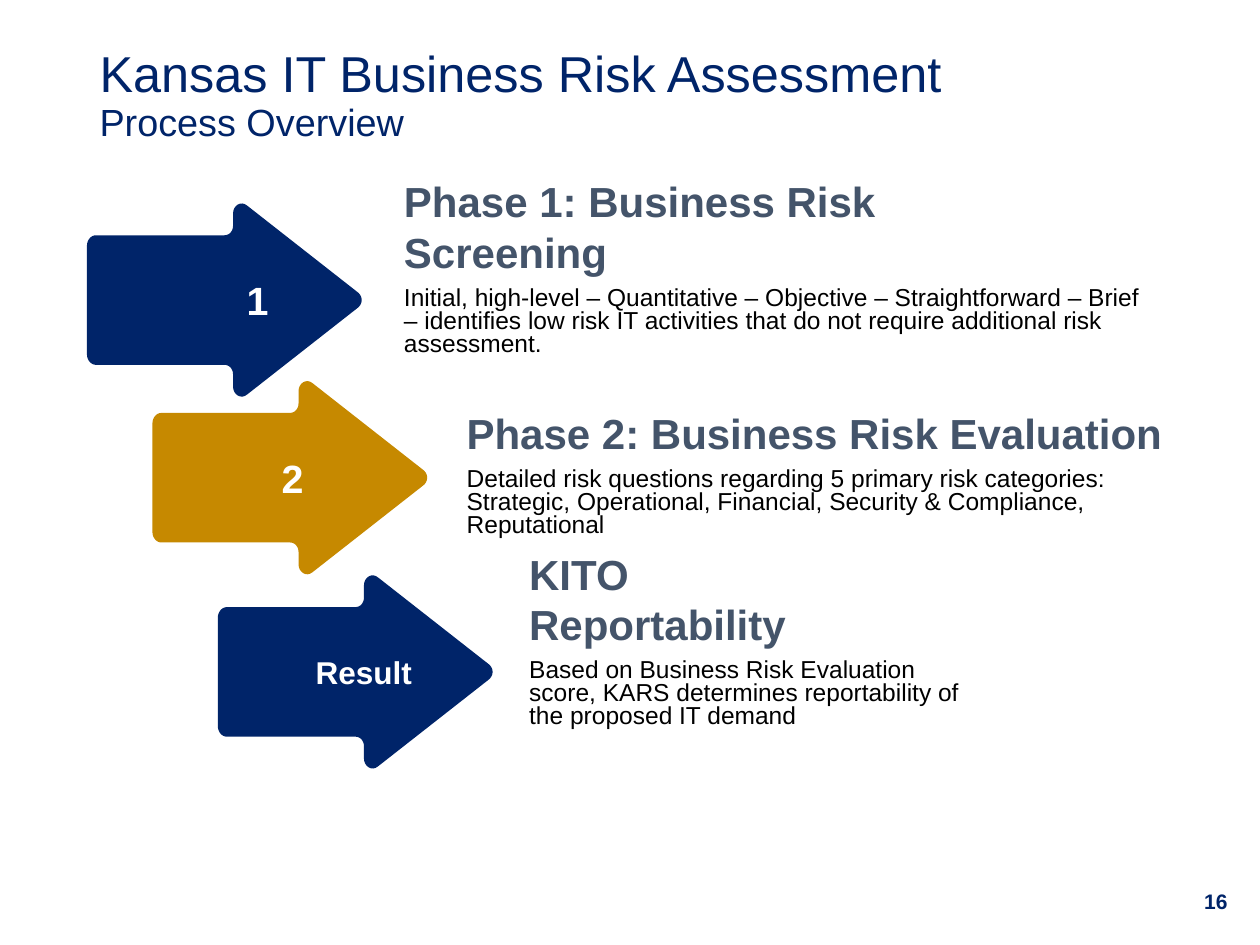
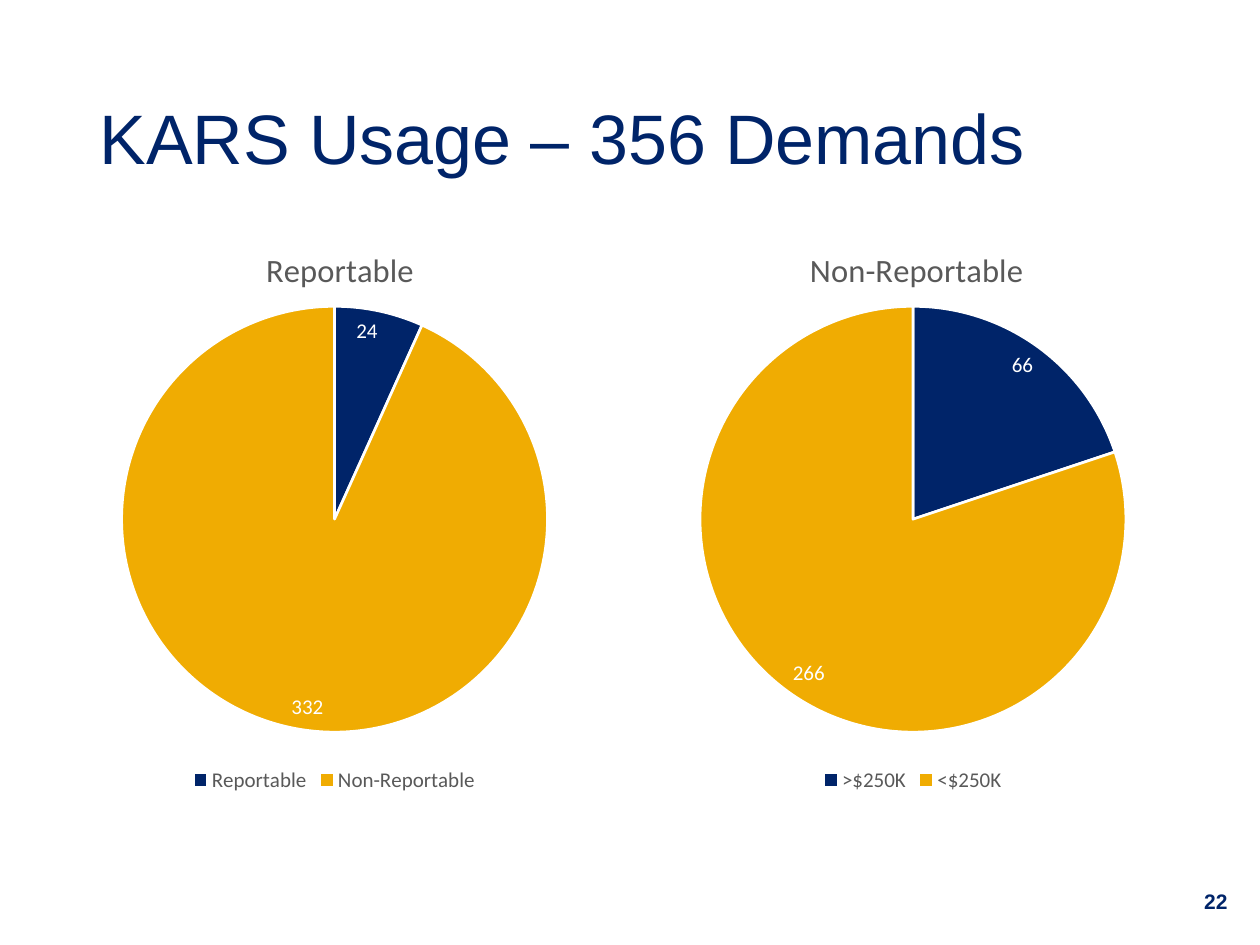
import pptx
import pptx.chart.data
import pptx.dml.color
import pptx.enum.chart
import pptx.enum.text
import pptx.oxml.ns
import pptx.util
from lxml import etree

Pt = pptx.util.Pt
RGB = pptx.dml.color.RGBColor.from_string
ALIGN = pptx.enum.text.PP_ALIGN
ANCHOR = pptx.enum.text.MSO_ANCHOR
qn = pptx.oxml.ns.qn

# Content
OVERVIEW = dict(
    number="16",
    title=[("Kansas IT Business Risk Assessment", 28.8), ("Process Overview", 21.6)],
    title_height=53.3)
PHASES = [
    dict(label="1", label_size=22.5, label_right=160.5, color="navy", top=114.5,
         heading="Phase 1: Business Risk Screening", heading_bottom=161.5,
         heading_width=307, body_width=429,
         body="Initial, high-level – Quantitative – Objective – Straightforward – Brief "
              "– identifies low risk IT activities that do not require additional risk "
              "assessment."),
    dict(label="2", label_size=22.5, label_right=180.5, color="gold", top=216,
         heading="Phase 2: Business Risk Evaluation", heading_bottom=265,
         heading_width=429, body_width=411,
         body="Detailed risk questions regarding 5 primary risk categories: Strategic, "
              "Operational, Financial, Security & Compliance, Reputational"),
    dict(label="Result", label_size=18, label_right=242.5, color="navy", top=327,
         heading="KITO Reportability", heading_bottom=374.5,
         heading_width=169, body_width=264,
         body="Based on Business Risk Evaluation score, KARS determines reportability of "
              "the proposed IT demand"),
]
USAGE = dict(number="22", title=[("KARS Usage – 356 Demands", 40)], title_height=104.4)
PIES = [
    dict(title="Reportable", title_x=0.35, left=49.7,
         values={"Reportable": 24, "Non-Reportable": 332}),
    dict(title="Non-Reportable", title_x=0.28, left=380.2,
         values={">$250K": 66, "<$250K": 266}),
]

# Theme
THEME = dict(
    font="Arial", chart_font="Calibri",
    colors=dict(navy="002469", gold="C68900", amber="F0AC02", slate="44546A",
                gray="595959", black="000000", white="FFFFFF"),
    sizes=dict(heading=24, body=14, number=12, chart_title=18.6, chart=12))
COLORS, SIZES = THEME["colors"], THEME["sizes"]

# Layout
MARGIN = 49.7
ARROW_STEP, ARROW_HEIGHT = 37.4, 114
TEXT_LEFT, TEXT_STEP = 228, 35.75
# Rounded corners of the arrow's upper half, each four Bezier points
CORNERS = [
    [(0, 26), (0, 22.5), (2.5, 20), (5, 20)],
    [(78.5, 20), (81.5, 20), (83.5, 17.5), (83.5, 14.5)],
    [(83.5, 7.5), (83.5, 3), (88, 0), (91.5, 3)],
]
TIP = [(154, 52), (158, 54.5), (158, 59.5), (154, 62)]


def assign(target, **values):
    for name, value in values.items():
        setattr(target, name, value)


def style(font, size, color, bold=False, name=THEME["font"]):
    assign(font, name=name, size=Pt(size), bold=bold)
    font.color.rgb = RGB(COLORS[color])


def add_text(s, text, box, size, color, bold=False, align=ALIGN.LEFT,
             anchor=ANCHOR.MIDDLE, insets=(7.2, 3.6, 7.2, 3.6), spacing=None):
    tf = s.shapes.add_textbox(*map(Pt, box)).text_frame
    left, top, right, bottom = map(Pt, insets)
    assign(tf, word_wrap=True, vertical_anchor=anchor, margin_left=left,
           margin_top=top, margin_right=right, margin_bottom=bottom)
    p = tf.paragraphs[0]
    assign(p, alignment=align, line_spacing=spacing)
    r = p.add_run()
    r.text = text
    style(r.font, size, color, bold)


def add_slide(prs, content):
    s = prs.slides.add_slide(prs.slide_layouts[5])
    title = s.shapes.title
    assign(title, left=Pt(MARGIN), top=Pt(28.8), width=Pt(620.6),
           height=Pt(content["title_height"]))
    assign(title.text_frame, vertical_anchor=ANCHOR.MIDDLE, word_wrap=True,
           auto_size=pptx.enum.text.MSO_AUTO_SIZE.NONE)
    p = title.text_frame.paragraphs[0]
    assign(p, alignment=ALIGN.LEFT, line_spacing=0.9)
    for i, (text, size) in enumerate(content["title"]):
        if i:
            p.add_line_break()
        r = p.add_run()
        r.text = text
        style(r.font, size, "navy")
    add_text(s, content["number"], (546.5, 500.4, 162, 28.8), SIZES["number"],
             "navy", bold=True, align=ALIGN.RIGHT)
    return s


# Phase arrows
def curve(points, steps=8):
    for i in range(steps + 1):
        t = i / steps
        weights = ((1 - t) ** 3, 3 * t * (1 - t) ** 2, 3 * t * t * (1 - t), t ** 3)
        yield tuple(sum(w * pt[axis] for w, pt in zip(weights, points)) for axis in (0, 1))


def add_arrow(s, left, top, color):
    upper = [pt for corner in CORNERS for pt in curve(corner)]
    lower = [(x, ARROW_HEIGHT - y) for x, y in reversed(upper)]
    outline = [(Pt(left + x), Pt(top + y)) for x, y in [*upper, *curve(TIP), *lower]]
    builder = s.shapes.build_freeform(*outline[0])
    builder.add_line_segments(outline[1:], close=True)
    sp = builder.convert_to_shape()
    sp.shadow.inherit = False
    sp.fill.solid()
    sp.fill.fore_color.rgb = RGB(COLORS[color])
    sp.line.fill.background()


def add_phase(s, i, phase):
    top, bottom = phase["top"], phase["heading_bottom"]
    left = TEXT_LEFT + i * TEXT_STEP
    add_text(s, phase["body"], (left, bottom + 1.8, phase["body_width"], 42),
             SIZES["body"], "black", anchor=ANCHOR.TOP,
             insets=(2.9, 1.4, 2.9, 1.4), spacing=Pt(13.1))
    add_text(s, phase["heading"], (left, bottom - 63, phase["heading_width"], 63),
             SIZES["heading"], "slate", bold=True, anchor=ANCHOR.BOTTOM,
             insets=(2.9, 3.6, 7.2, 3.6))
    add_arrow(s, MARGIN + i * ARROW_STEP, top, phase["color"])
    add_text(s, phase["label"],
             (phase["label_right"] - 104, top + ARROW_HEIGHT / 2 - 24, 104, 48),
             phase["label_size"], "white", bold=True, align=ALIGN.RIGHT)


# Pie charts
def set_layout(parent, **values):
    for old in parent.findall(qn("c:layout")):
        parent.remove(old)
    layout = etree.Element(qn("c:layout"))
    manual = etree.SubElement(layout, qn("c:manualLayout"))
    for name, value in values.items():
        etree.SubElement(manual, qn("c:" + name)).set("val", str(value))
    parent.insert(0 if parent.find(qn("c:tx")) is None else 1, layout)


def add_pie(s, pie):
    data = pptx.chart.data.CategoryChartData()
    data.categories = list(pie["values"])
    data.add_series("Series 1", list(pie["values"].values()))
    chart = s.shapes.add_chart(pptx.enum.chart.XL_CHART_TYPE.PIE, Pt(pie["left"]),
                               Pt(121), Pt(283), Pt(334.8), data).chart
    chart_font = THEME["chart_font"]
    style(chart.font, SIZES["chart"], "gray", name=chart_font)

    tf = chart.chart_title.text_frame
    r = tf.paragraphs[0].add_run()
    r.text = pie["title"]
    style(r.font, SIZES["chart_title"], "gray", name=chart_font)
    set_layout(chart.chart_title._element, xMode="edge", yMode="edge",
               x=pie["title_x"], y=0.05)

    chart.has_legend = True
    assign(chart.legend, position=pptx.enum.chart.XL_LEGEND_POSITION.BOTTOM,
           include_in_layout=False)
    style(chart.legend.font, SIZES["chart"], "gray", name=chart_font)

    plot = chart.plots[0]
    assign(plot, vary_by_categories=True, has_data_labels=True)
    assign(plot.data_labels, show_value=True, show_percentage=False,
           position=pptx.enum.chart.XL_LABEL_POSITION.INSIDE_END)
    style(plot.data_labels.font, SIZES["chart"], "white", name=chart_font)
    for i, color in enumerate(("navy", "amber")):
        fmt = plot.series[0].points[i].format
        fmt.fill.solid()
        fmt.fill.fore_color.rgb = RGB(COLORS[color])
        fmt.line.color.rgb = RGB(COLORS["white"])
        fmt.line.width = Pt(1.5)
    set_layout(chart._chartSpace.chart.plotArea, layoutTarget="inner", xMode="edge",
               yMode="edge", x=0.07, y=0.16, w=0.86, h=0.73)


def main():
    prs = pptx.Presentation()
    assign(prs, slide_width=Pt(720), slide_height=Pt(540))
    s = add_slide(prs, OVERVIEW)
    for i, phase in enumerate(PHASES):
        add_phase(s, i, phase)
    s = add_slide(prs, USAGE)
    for pie in PIES:
        add_pie(s, pie)
    prs.save("out.pptx")


if __name__ == "__main__":
    main()
